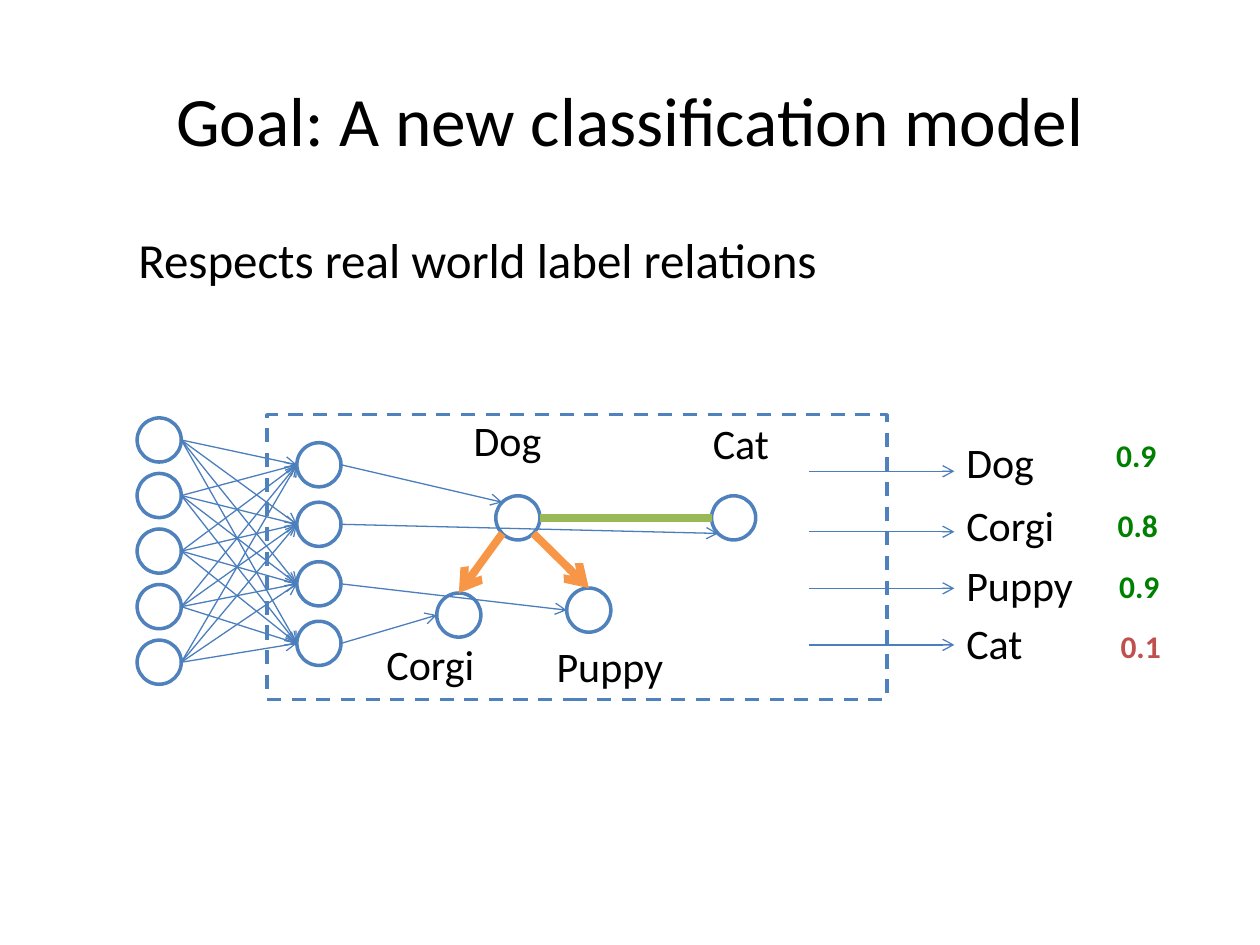
from dataclasses import dataclass
from itertools import product
from math import cos, radians, sin

from lxml import etree
from pptx import Presentation
from pptx import util as u
from pptx.dml.color import RGBColor
from pptx.enum import dml, shapes, text
from pptx.oxml.ns import qn

BLUE, ARROW_BLUE, ORANGE, GREEN = "4F81BD", "4B7EBC", "F79646", "98B955"
BLACK, WHITE, HIGH, LOW = "000000", "FFFFFF", "008000", "C0504D"
DIAMETER = 0.89
LABEL_W, LABEL_H = 3.86, 1.28
LEFT, TOP_LEFT, BOTTOM_LEFT, TOP, RIGHT, BOTTOM_RIGHT = 180, 225, 135, 270, 0, 45

Point = tuple[float, float]


@dataclass(frozen=True)
class Node:
    """A circle given by its centre in centimetres."""
    x: float
    y: float

    def rim(self, angle: float) -> Point:
        """Point on the circle, the angle in degrees clockwise from the right."""
        a = radians(angle)
        return self.x + DIAMETER / 2 * cos(a), self.y + DIAMETER / 2 * sin(a)


@dataclass(frozen=True)
class Output:
    label: str
    label_top: float
    arrow_y: float
    score: str
    score_top: float
    color: str


def rgb(value: str) -> RGBColor:
    return RGBColor.from_string(value)


def add_text(s, content: str, left: float, top: float, width: float, height: float,
             size: float = 24, color: str = BLACK, bold: bool = False,
             inset: float = 0.13, align=text.PP_ALIGN.LEFT) -> None:
    tf = s.shapes.add_textbox(u.Cm(left), u.Cm(top), u.Cm(width), u.Cm(height)).text_frame
    tf.word_wrap = True
    tf.margin_top = u.Cm(inset)
    tf.text = content
    p = tf.paragraphs[0]
    p.alignment = align
    font = p.runs[0].font
    font.name, font.size, font.bold = "Calibri", u.Pt(size), bold
    font.color.rgb = rgb(color)


def add_outline(s, kind, left: float, top: float, width: float, height: float):
    sp = s.shapes.add_shape(kind, u.Cm(left), u.Cm(top), u.Cm(width), u.Cm(height))
    sp.shadow.inherit = False
    sp.fill.background()
    sp.line.color.rgb = rgb(BLUE)
    sp.line.width = u.Pt(2)
    return sp


def add_node(s, node: Node) -> None:
    sp = add_outline(s, shapes.MSO_SHAPE.OVAL, node.x - DIAMETER / 2,
                     node.y - DIAMETER / 2, DIAMETER, DIAMETER)
    sp.fill.solid()
    sp.fill.fore_color.rgb = rgb(WHITE)


def add_edge(s, start: Point, end: Point, color: str = ARROW_BLUE,
             width: float = 0.75, arrow: bool = True) -> None:
    line = s.shapes.add_connector(shapes.MSO_CONNECTOR.STRAIGHT,
                                  *(u.Cm(v) for v in (*start, *end)))
    line.line.color.rgb = rgb(color)
    line.line.width = u.Pt(width)
    if arrow:
        etree.SubElement(line.line._get_or_add_ln(), qn("a:tailEnd"), type="arrow")
    etree.SubElement(line._element.spPr, qn("a:effectLst"))


def main() -> None:
    prs = Presentation()
    prs.slide_width, prs.slide_height = u.Cm(25.4), u.Cm(19.05)
    s = prs.slides.add_slide(prs.slide_layouts[6])

    add_text(s, "Goal: A new classification model", 1.27, 1.55, 22.86, 3.18,
             size=39.6, inset=0, align=text.PP_ALIGN.CENTER)
    add_text(s, "Respects real world label relations", 2.54, 4.45, 21.59, 12.57,
             size=28, inset=0.18)

    inputs = [Node(3.21, 8.87 + 1.12 * i) for i in range(5)]
    hidden = [Node(6.43, 9.37 + 1.2 * i) for i in range(4)]
    for node in inputs + hidden:
        add_node(s, node)
    for source, target in product(inputs, hidden):
        add_edge(s, source.rim(RIGHT), target.rim(LEFT))

    frame = add_outline(s, shapes.MSO_SHAPE.RECTANGLE, 5.38, 8.36, 12.5, 5.74)
    frame.line.dash_style = dml.MSO_LINE.DASH

    outputs = [
        Output("Dog", 8.66, 9.5, "0.9", 8.66, HIGH),
        Output("Corgi", 9.93, 10.72, "0.8", 10.08, HIGH),
        Output("Puppy", 11.15, 11.86, "0.9", 11.3, HIGH),
        Output("Cat", 12.32, 13, "0.1", 12.52, LOW),
    ]
    for i, out in enumerate(outputs):
        add_text(s, out.label, 19.23, out.label_top, LABEL_W, LABEL_H)
        add_edge(s, (16.3, out.arrow_y), (19.24, out.arrow_y))
        add_text(s, out.score, 22.25 + 0.03 * i, out.score_top, 1.65, 1.02,
                 size=18, color=out.color, bold=True)

    dog, cat = Node(10.44, 10.44), Node(14.79, 10.44)
    corgi, puppy = Node(9.25, 12.4), Node(11.87, 12.3)
    for node, label, left, top in [
        (dog, "Dog", 9.3, 8.23), (cat, "Cat", 14.12, 8.28),
        (corgi, "Corgi", 7.54, 12.75), (puppy, "Puppy", 10.97, 12.78),
    ]:
        add_node(s, node)
        add_text(s, label, left, top, LABEL_W, LABEL_H)

    add_edge(s, dog.rim(BOTTOM_LEFT), corgi.rim(TOP), ORANGE, 4.5)
    add_edge(s, dog.rim(BOTTOM_RIGHT), puppy.rim(TOP), ORANGE, 4.5)
    add_edge(s, dog.rim(RIGHT), cat.rim(LEFT), GREEN, 4.5, arrow=False)

    entries = [dog.rim(TOP_LEFT), cat.rim(BOTTOM_LEFT), puppy.rim(LEFT), corgi.rim(LEFT)]
    for source, entry in zip(hidden, entries):
        add_edge(s, source.rim(RIGHT), entry)

    prs.save("out.pptx")


if __name__ == "__main__":
    main()
